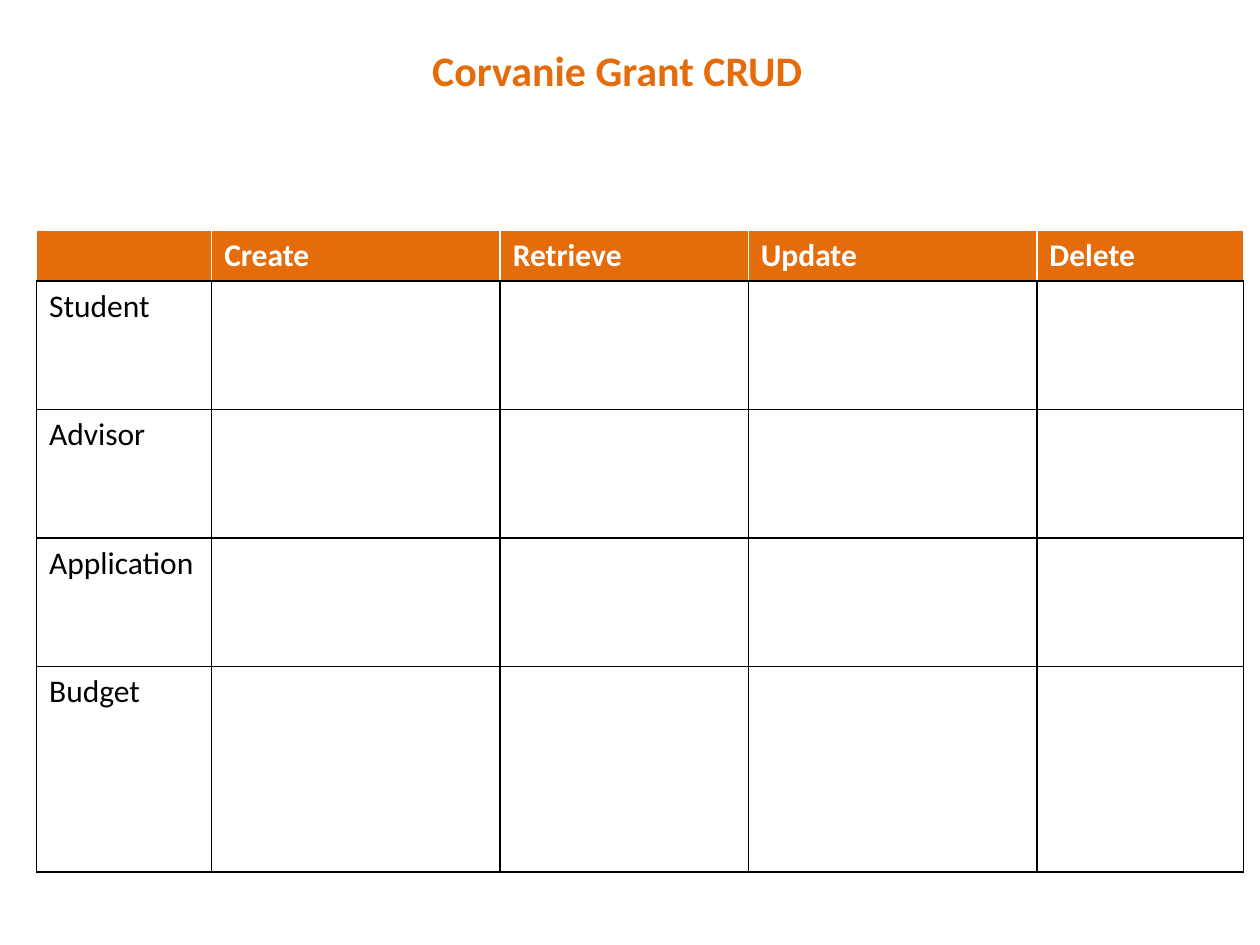
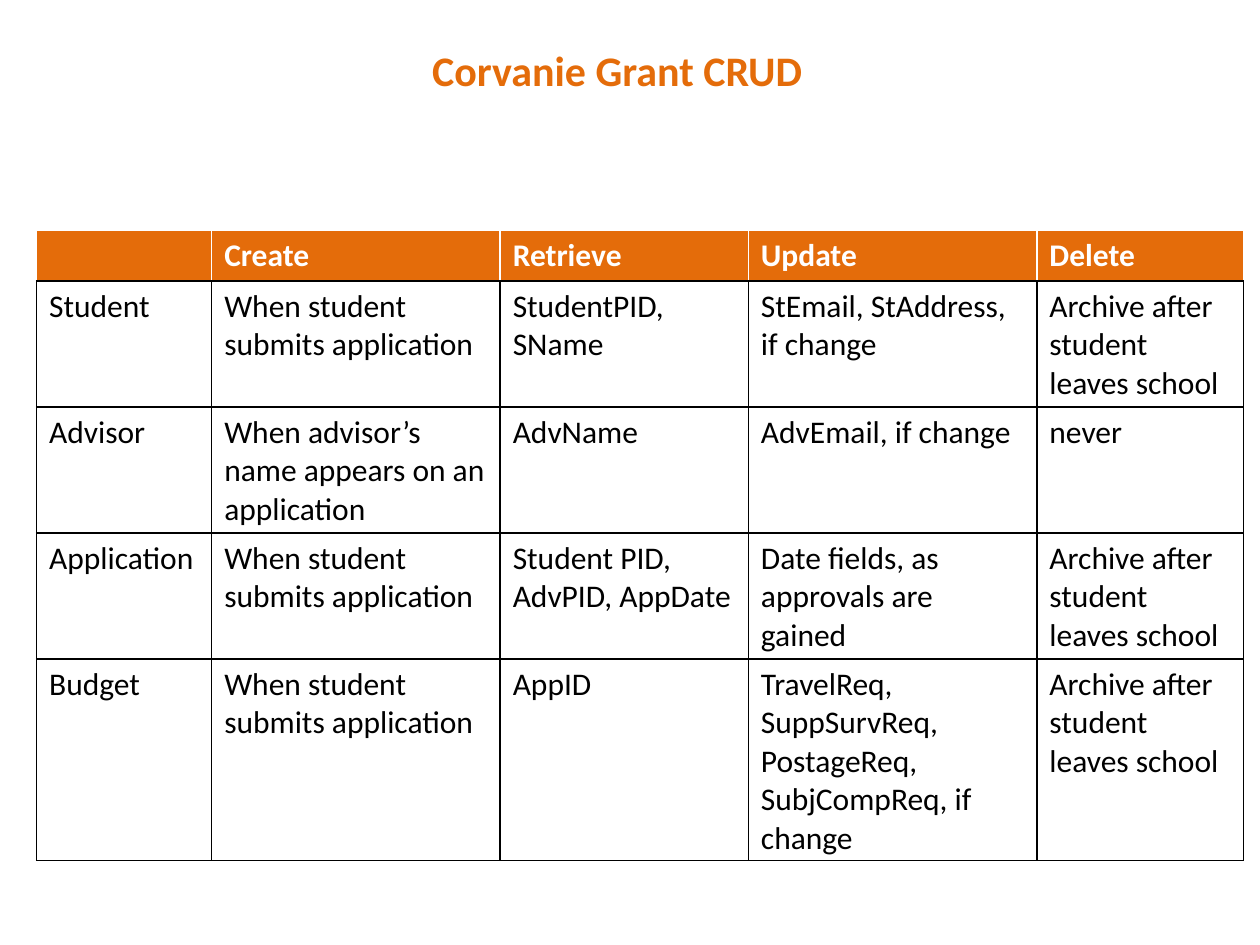
from dataclasses import dataclass

from lxml.etree import SubElement
from pptx import Presentation
from pptx.dml.color import RGBColor
from pptx.enum.text import MSO_ANCHOR, MSO_AUTO_SIZE, PP_ALIGN
from pptx.oxml.ns import qn
from pptx.util import Inches, Pt


@dataclass(frozen=True)
class Theme:
    """Colours, font and type sizes shared by the slides."""
    accent: str = "E46C0A"
    ink: str = "000000"
    paper: str = "FFFFFF"
    font: str = "Calibri"
    title_size: int = 24
    table_size: int = 18
    border: int = 1


THEME = Theme()
TITLE = "Corvanie Grant CRUD"
TITLE_BOX = (3.33, 0.3, 3.42, 0.5)
MATRIX_BOX = (0.29, 1.83, 9.58, 5.01)
COLUMN_WIDTHS = (1.39, 2.29, 1.97, 2.29, 1.64)
OPERATIONS = ("", "Create", "Retrieve", "Update", "Delete")
ENTITIES = ("Student", "Advisor", "Application", "Budget")
ON_SUBMIT = "When student submits application"
ON_LEAVING = "Archive after student leaves school"
BLANK_RULES = [("",) * 4 for entity in ENTITIES]
ANSWER_RULES = [
    (ON_SUBMIT, "StudentPID, SName", "StEmail, StAddress, if change", ON_LEAVING),
    ("When advisor’s name appears on an application", "AdvName",
     "AdvEmail, if change", "never"),
    (ON_SUBMIT, "Student PID, AdvPID, AppDate",
     "Date fields, as approvals are gained", ON_LEAVING),
    (ON_SUBMIT, "AppID",
     "TravelReq, SuppSurvReq, PostageReq, SubjCompReq, if change", ON_LEAVING),
]
BLANK_HEIGHTS = (0.4, 1.02, 1.02, 1.02, 1.63)
ANSWER_HEIGHTS = (0.4, 1, 1, 1, 1.6)


def add_run(paragraph, text, size, color, bold):
    """Add one formatted run to a paragraph."""
    run = paragraph.add_run()
    run.text = text
    run.font.name = THEME.font
    run.font.size = Pt(size)
    run.font.bold = bold
    run.font.color.rgb = RGBColor.from_string(color)


def set_borders(cell, side_color, top_color, bottom_color):
    """Draw the four borders of a cell."""
    properties = cell._tc.get_or_add_tcPr()
    colors = {"a:lnL": side_color, "a:lnR": side_color,
              "a:lnT": top_color, "a:lnB": bottom_color}
    for position, (tag, color) in enumerate(colors.items()):
        line = SubElement(properties, qn(tag), w=str(Pt(THEME.border)))
        fill = SubElement(line, qn("a:solidFill"))
        SubElement(fill, qn("a:srgbClr"), val=color)
        properties.insert(position, line)


def fill_cell(cell, text, is_header):
    """Write and style one cell of the matrix."""
    cell.margin_bottom = Inches(0.03)
    if is_header:
        cell.fill.solid()
        cell.fill.fore_color.rgb = RGBColor.from_string(THEME.accent)
        set_borders(cell, THEME.paper, THEME.paper, THEME.ink)
    else:
        cell.fill.background()
        set_borders(cell, THEME.ink, THEME.ink, THEME.ink)
    paragraph = cell.text_frame.paragraphs[0]
    paragraph.font.size = Pt(THEME.table_size)
    if text:
        color = THEME.paper if is_header else THEME.ink
        add_run(paragraph, text, THEME.table_size, color, is_header)


def place_title(slide, box):
    """Move and format the title placeholder."""
    title = slide.shapes.title
    title.left, title.top, title.width, title.height = map(Inches, box)
    frame = title.text_frame
    frame.word_wrap = True
    frame.auto_size = MSO_AUTO_SIZE.SHAPE_TO_FIT_TEXT
    frame.vertical_anchor = MSO_ANCHOR.TOP
    paragraph = frame.paragraphs[0]
    paragraph.alignment = PP_ALIGN.LEFT
    add_run(paragraph, TITLE, THEME.title_size, THEME.accent, True)


def add_matrix(slide, box, rules, heights):
    """Add the table of entities against operations."""
    rows = [OPERATIONS] + [(entity, *rule) for entity, rule in zip(ENTITIES, rules)]
    matrix = slide.shapes.add_table(
        len(rows), len(OPERATIONS), *map(Inches, box)).table
    matrix.horz_banding = False
    for column, width in zip(matrix.columns, COLUMN_WIDTHS):
        column.width = Inches(width)
    for row_index, (texts, height) in enumerate(zip(rows, heights)):
        matrix.rows[row_index].height = Inches(height)
        for column_index, text in enumerate(texts):
            fill_cell(matrix.cell(row_index, column_index), text, row_index == 0)


def add_crud_slide(deck, rules, heights):
    """Add a slide with the title and the CRUD matrix."""
    slide = deck.slides.add_slide(deck.slide_layouts.get_by_name("Title Only"))
    add_matrix(slide, MATRIX_BOX, rules, heights)
    place_title(slide, TITLE_BOX)


def main():
    """Build and save the deck."""
    deck = Presentation()
    deck.slide_width, deck.slide_height = Inches(10), Inches(7.5)
    add_crud_slide(deck, BLANK_RULES, BLANK_HEIGHTS)
    add_crud_slide(deck, ANSWER_RULES, ANSWER_HEIGHTS)
    deck.save("out.pptx")


if __name__ == "__main__":
    main()
